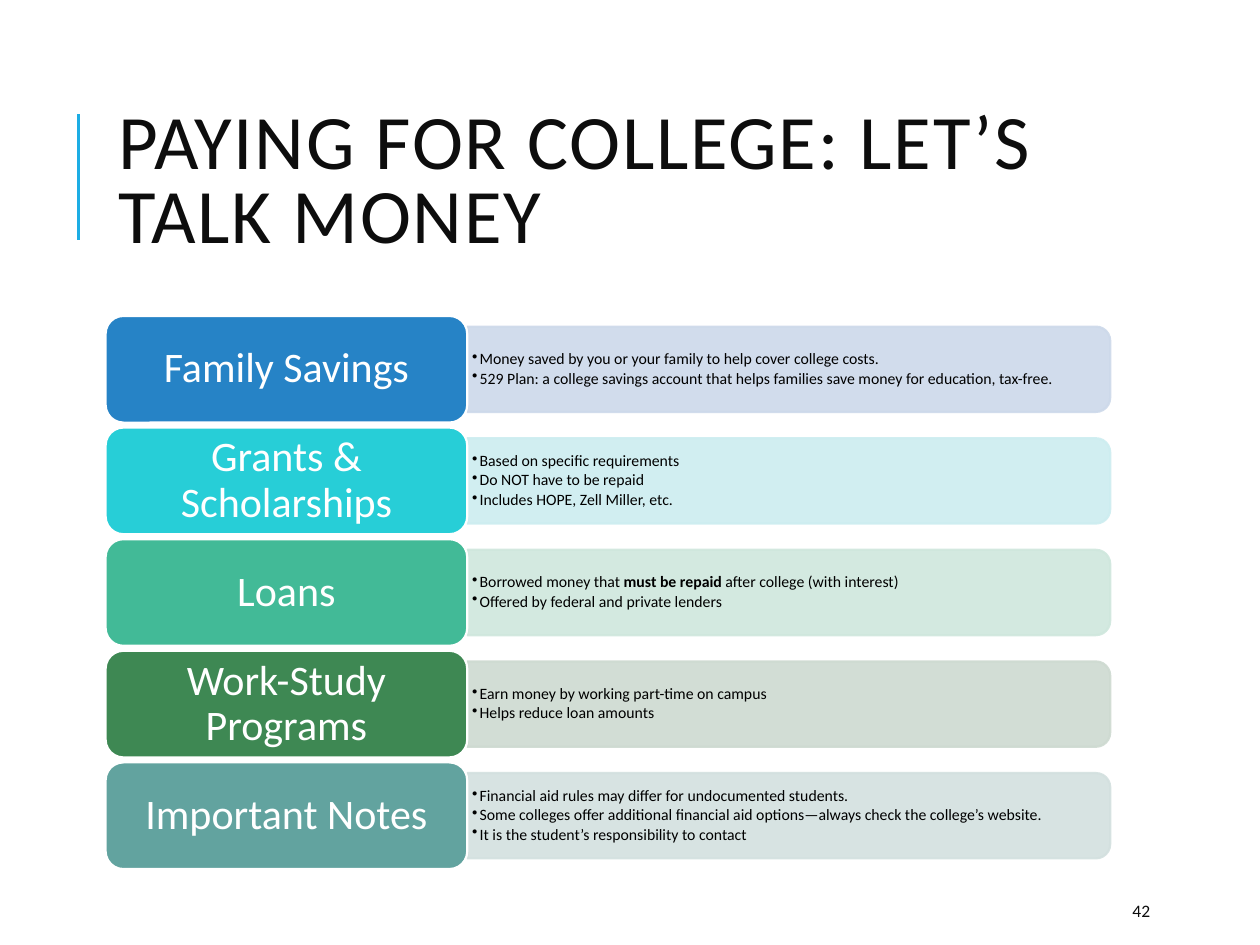
from dataclasses import dataclass
from typing import NamedTuple

from lxml.etree import SubElement
from pptx import Presentation
from pptx.dml.color import RGBColor
from pptx.enum.shapes import MSO_CONNECTOR as Connector, MSO_SHAPE as Shape
from pptx.enum.text import MSO_ANCHOR as Anchor, MSO_AUTO_SIZE as AutoSize, PP_ALIGN as Align
from pptx.oxml.ns import qn
from pptx.util import Cm, Pt


@dataclass(frozen=True)
class Theme:
    """Colours, font and type sizes of the slide."""
    font: str = "Calibri"
    ink: str = "0D0D0D"
    detail_ink: str = "000000"
    white: str = "FFFFFF"
    accent: str = "1CADE4"
    title_size: float = 44
    label_size: float = 24
    detail_size: float = 9
    number_size: float = 10
    border: float = 1.25
    rule: float = 1.5
    panel_opacity: int = 90


class Box(NamedTuple):
    """Left, top, width and height in centimetres."""
    left: float
    top: float
    width: float
    height: float

    def lengths(self):
        """Return the four values as slide lengths."""
        return [Cm(value) for value in self]

    def inset(self, margin):
        """Return the box shrunk by a margin on every side."""
        return Box(self.left + margin, self.top + margin,
                   self.width - 2 * margin, self.height - 2 * margin)


class Source(NamedTuple):
    """One way of paying; every second run of a detail is bold."""
    label: str
    colour: str
    tint: str
    details: list


THEME = Theme()
TITLE = "PAYING FOR COLLEGE: LET’S TALK MONEY"
SOURCES = [
    Source("Family Savings", "2683C6", "CDD9EA", [
        ["Money saved by you or your family to help cover college costs."],
        ["529 Plan: a college savings account that helps families save money "
         "for education, tax-free."]]),
    Source("Grants & Scholarships", "27CED7", "CDEDF0", [
        ["Based on specific requirements"],
        ["Do NOT have to be repaid"],
        ["Includes HOPE, Zell Miller, etc."]]),
    Source("Loans", "42BA97", "CFE7DD", [
        ["Borrowed money that ", "must be repaid ", "after college (with interest)"],
        ["Offered by federal and private lenders"]]),
    Source("Work-Study Programs", "3E8853", "CEDAD1", [
        ["Earn money by working part-time on campus"],
        ["Helps reduce loan amounts"]]),
    Source("Important Notes", "62A39F", "D3E0DF", [
        ["Financial aid rules may differ for undocumented students."],
        ["Some colleges offer additional financial aid options—always check "
         "the college’s website."],
        ["It is the student’s responsibility to contact"]]),
]


def add_run(paragraph, text, size, colour, bold=False):
    """Append one formatted run to a paragraph."""
    run = paragraph.add_run()
    run.text = text
    run.font.name = THEME.font
    run.font.size = Pt(size)
    run.font.bold = bold
    run.font.color.rgb = RGBColor.from_string(colour)
    return run


def add_frame(shapes, box):
    """Add a wrapping, vertically centred text box and return its frame."""
    frame = shapes.add_textbox(*box.lengths()).text_frame
    frame.word_wrap = True
    frame.vertical_anchor = Anchor.MIDDLE
    return frame


def add_block(shapes, kind, box, fill, line, opacity=100):
    """Add a filled, outlined shape without shadow."""
    block = shapes.add_shape(kind, *box.lengths())
    block.shadow.inherit = False
    block.line.width = Pt(THEME.border)
    block.fill.solid()
    for paint, colour in ((block.fill, fill), (block.line.fill, line)):
        paint.solid()
        paint.fore_color.rgb = RGBColor.from_string(colour)
    if opacity < 100:
        for colour in list(block._element.spPr.iter(qn("a:srgbClr"))):
            SubElement(colour, qn("a:alpha"), val=str(opacity * 1000))
    return block


def add_heading(slide, box):
    """Place the title and the accent rule to its left."""
    rule_left, rule_top, rule_height = box.left - 0.55, box.top + 0.66, 2.54
    rule = slide.shapes.add_connector(
        Connector.STRAIGHT, Cm(rule_left), Cm(rule_top + rule_height),
        Cm(rule_left), Cm(rule_top))
    rule.line.width = Pt(THEME.rule)
    rule.line.color.rgb = RGBColor.from_string(THEME.accent)
    SubElement(rule._element.spPr, qn("a:effectLst"))

    title = slide.shapes.title
    title.left, title.top, title.width, title.height = box.lengths()
    frame = title.text_frame
    frame.word_wrap = True
    frame.auto_size = AutoSize.NONE
    frame.vertical_anchor = Anchor.MIDDLE
    heading = frame.paragraphs[0]
    heading.alignment = Align.LEFT
    heading.line_spacing = 0.8
    run = add_run(heading, TITLE, THEME.title_size, THEME.ink)
    run.font._element.set("spc", "100")


def add_details(shapes, box, details):
    """Write the bulleted details inside a panel."""
    frame = add_frame(shapes, box)
    frame.margin_left = frame.margin_right = Cm(0.1)
    frame.margin_top = frame.margin_bottom = Cm(0.05)
    for index, runs in enumerate(details):
        detail = frame.add_paragraph() if index else frame.paragraphs[0]
        detail.level = 1
        properties = detail._p.get_or_add_pPr()
        properties.set("marL", str(Cm(0.15)))
        properties.set("indent", str(-Cm(0.15)))
        SubElement(properties, qn("a:buChar"), char="•")
        detail.line_spacing = 0.9
        detail.space_after = Pt(0.15 * THEME.detail_size)
        for position, text in enumerate(runs):
            add_run(detail, text, THEME.detail_size, THEME.detail_ink, position % 2 == 1)


def add_source(shapes, box, source):
    """Place one row: a tinted detail panel and a coloured label card."""
    card = Box(box.left, box.top, 7.29, box.height)
    length, depth = box.width - card.width, 0.8 * box.height
    panel_left = card.left + card.width
    middle = box.top + box.height / 2
    upright = Box(panel_left + (length - depth) / 2, middle - length / 2, depth, length)
    panel = add_block(shapes, Shape.ROUND_2_SAME_RECTANGLE, upright,
                      source.tint, source.tint, THEME.panel_opacity)
    panel.rotation = 90
    add_details(shapes, Box(panel_left, middle - 0.78, length - 0.08, 1.56), source.details)

    add_block(shapes, Shape.ROUNDED_RECTANGLE, card, source.colour, THEME.white)
    label = add_frame(shapes, card.inset(0.1)).paragraphs[0]
    label.alignment = Align.CENTER
    label.line_spacing = 0.9
    add_run(label, source.label, THEME.label_size, THEME.white)


def add_sources(slide, box):
    """Stack the rows evenly in one group."""
    rows = slide.shapes.add_group_shape().shapes
    gap = 0.1
    height = (box.height - gap * (len(SOURCES) - 1)) / len(SOURCES)
    for index, source in enumerate(SOURCES):
        top = box.top + index * (height + gap)
        add_source(rows, Box(box.left, top, box.width, height), source)


def add_page_number(slide, box):
    """Write the page number."""
    number = add_frame(slide.shapes, box).paragraphs[0]
    add_run(number, "42", THEME.number_size, THEME.ink)


def main():
    """Build and save the slide."""
    deck = Presentation()
    deck.slide_width, deck.slide_height = Cm(25.4), Cm(19.05)
    slide = deck.slides.add_slide(deck.slide_layouts[5])
    add_heading(slide, Box(2.13, 1.63, 20.24, 4.17))
    add_page_number(slide, Box(22.58, 17.98, 2.03, 0.76))
    add_sources(slide, Box(2.13, 6.37, 20.25, 11.15))
    deck.save("out.pptx")


if __name__ == "__main__":
    main()
